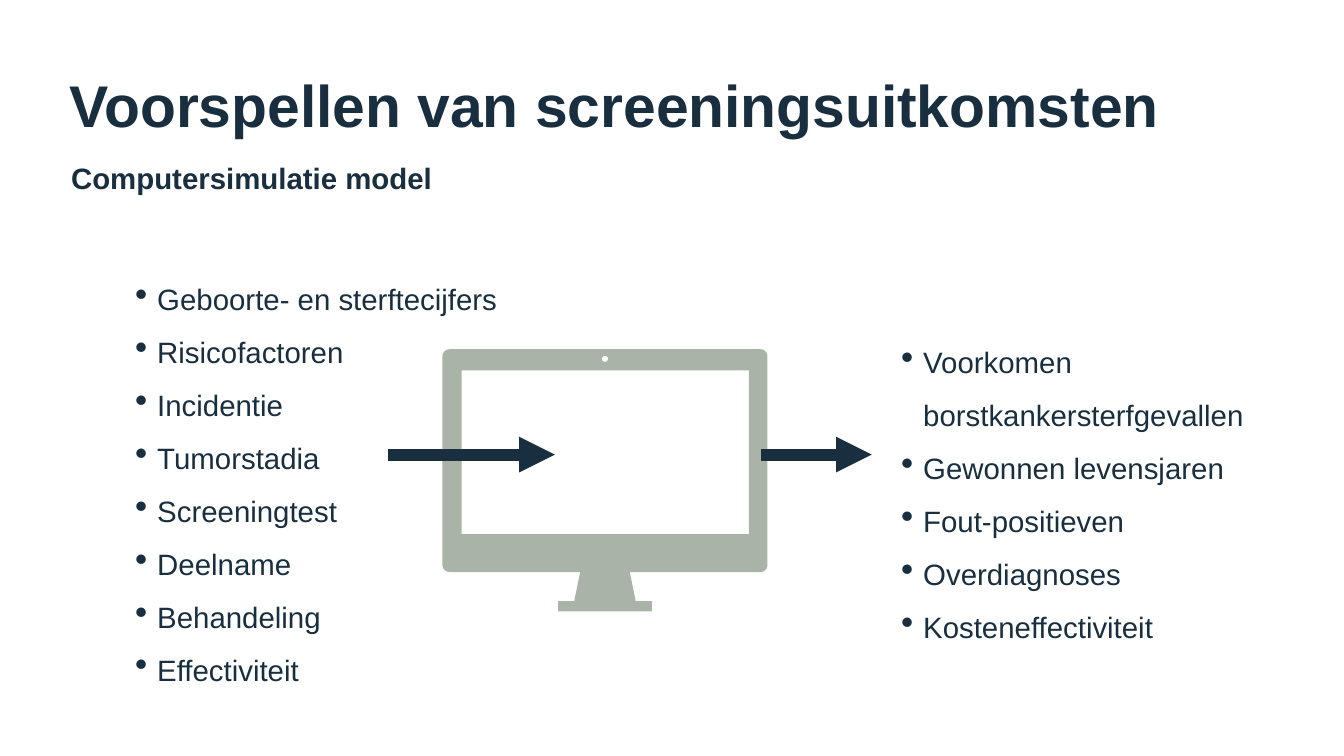
from math import cos, radians, sin

from lxml.etree import SubElement
from pptx import Presentation
from pptx.dml.color import RGBColor
from pptx.enum.shapes import MSO_CONNECTOR as CONNECTOR
from pptx.enum.text import MSO_ANCHOR as ANCHOR
from pptx.oxml.ns import qn
from pptx.util import Inches, Pt

NAVY = RGBColor(0x19, 0x2F, 0x3F)
SAGE = RGBColor(0xAA, 0xB3, 0xA8)


def add_text(lines, left, top, width, height, size=42, bold=False,
             bullet=False, wrap=False, spacing=None, anchor=ANCHOR.TOP):
    box = page.shapes.add_textbox(Inches(left), Inches(top), Inches(width), Inches(height))
    frame = box.text_frame
    frame.word_wrap = wrap
    frame.vertical_anchor = anchor
    frame.margin_left = frame.margin_right = Inches(0.06)
    frame.margin_top = frame.margin_bottom = Inches(0.06)
    for index, line in enumerate(lines):
        para = frame.add_paragraph() if index else frame.paragraphs[0]
        if bullet:
            props = para._p.get_or_add_pPr()
            props.set("marL", str(Inches(0.44)))
            props.set("indent", str(-Inches(0.44)))
            SubElement(props, qn("a:buSzPct"), val="123000")
            SubElement(props, qn("a:buChar"), char="•")
        if spacing:
            para.line_spacing = spacing
        span = para.add_run()
        span.text = line
        span.font.name = "Arial"
        span.font.size = Pt(size)
        span.font.bold = bold
        span.font.color.rgb = NAVY


def arc(center_x, center_y, radius, start, end):
    return [(Inches(center_x + radius * cos(radians(angle))),
             Inches(center_y + radius * sin(radians(angle))))
            for angle in range(start, end + 1, 15)]


deck = Presentation()
deck.slide_width = Inches(26.67)
deck.slide_height = Inches(15)
page = deck.slides.add_slide(deck.slide_layouts[6])

add_text(["Voorspellen van screeningsuitkomsten"], 1.32, 1.3, 21.76, 1.42, size=84, bold=True)
add_text(["Computersimulatie model"], 1.35, 2.98, 7.29, 0.76, bold=True,
         spacing=1.5, anchor=ANCHOR.MIDDLE)

left, top, right, bottom, radius = 8.78, 6.93, 15.23, 11.35, 0.14
middle = (left + right) / 2
stand_right = [(0.49, 11.35), (0.5, 11.39), (0.61, 11.93), (0.93, 11.93), (0.93, 12.13)]
stand = stand_right + [(-x, y) for x, y in reversed(stand_right)]
outline = (
    arc(left + radius, top + radius, radius, 180, 270)
    + arc(right - radius, top + radius, radius, 270, 360)
    + arc(right - radius, bottom - radius, radius, 0, 90)
    + [(Inches(middle + x), Inches(y)) for x, y in stand]
    + arc(left + radius, bottom - radius, radius, 90, 180)
)
camera = arc(middle, 7.12, 0.06, 0, 345)
screen = [(Inches(x), Inches(y))
          for x, y in [(9.16, 7.35), (14.86, 7.35), (14.86, 10.6), (9.16, 10.6)]]
builder = page.shapes.build_freeform(*outline[0])
builder.add_line_segments(outline[1:])
for hole in (camera, screen):
    builder.move_to(*hole[0])
    builder.add_line_segments(hole[1:])
monitor = builder.convert_to_shape()
monitor.shadow.inherit = False
monitor.fill.solid()
monitor.fill.fore_color.rgb = SAGE
monitor.line.fill.background()

for start, end in [(7.7, 11.01), (15.11, 17.3)]:
    arrow = page.shapes.add_connector(
        CONNECTOR.STRAIGHT, Inches(start), Inches(9.02), Inches(end), Inches(9.02))
    arrow.line.color.rgb = NAVY
    arrow.line.width = Pt(17)
    SubElement(arrow.line._get_or_add_ln(), qn("a:tailEnd"), type="triangle")
    SubElement(arrow._element.spPr, qn("a:effectLst"))

inputs = ["Geboorte- en sterftecijfers", "Risicofactoren", "Incidentie", "Tumorstadia",
          "Screeningtest", "Deelname", "Behandeling", "Effectiviteit"]
outcomes = ["Voorkomen borstkankersterfgevallen", "Gewonnen levensjaren", "Fout-positieven",
            "Overdiagnoses", "Kosteneffectiviteit"]
add_text(inputs, 2.62, 5.17, 7.35, 8.5, bullet=True, wrap=True, spacing=1.5)
add_text(outcomes, 17.82, 6.42, 7.59, 6.4, bullet=True, wrap=True, spacing=1.5)

deck.save("out.pptx")
